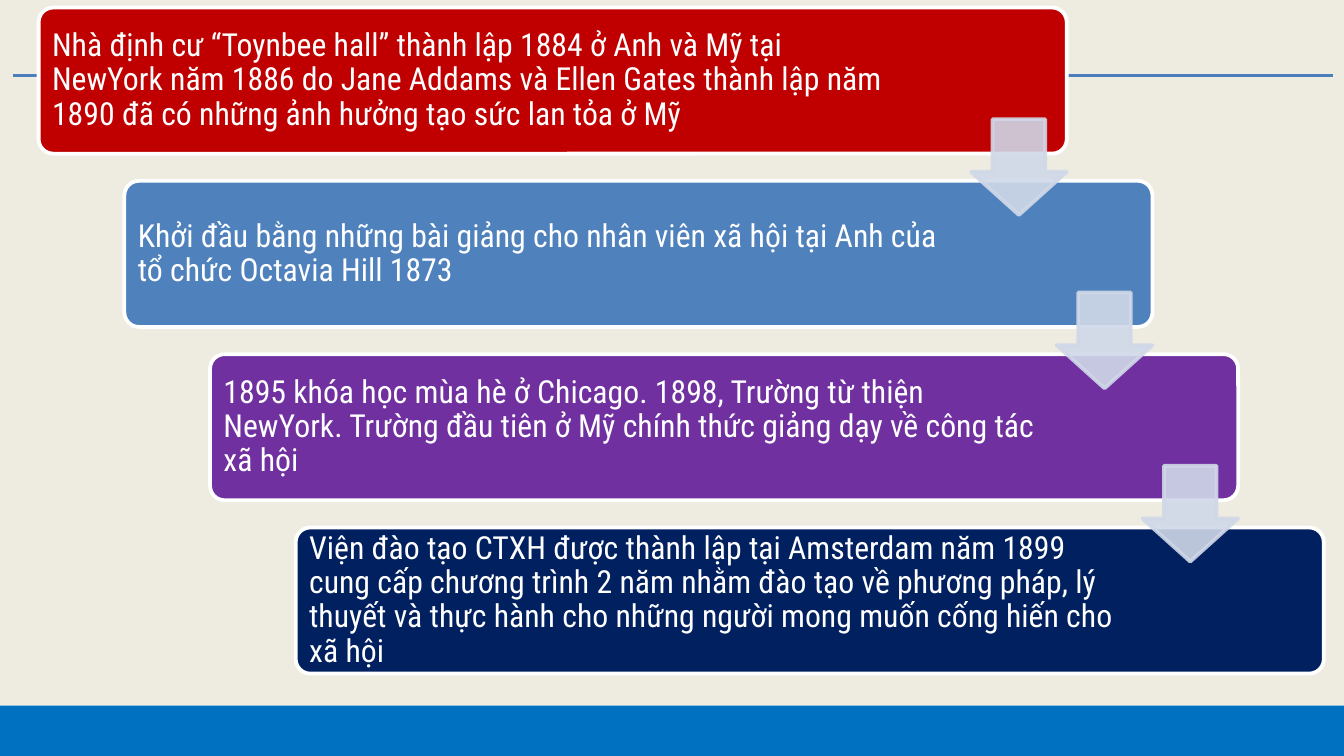
from lxml import etree
from pptx import Presentation
from pptx import util as u
from pptx.dml.color import RGBColor
from pptx.enum import shapes, text
from pptx.oxml.ns import qn

PX = 5715  # EMU in one px, 160 px to the inch
SLIDE = (1600, 900)
CARD = (1224, 174)
ARROW = 114
ARROW_DROP = 133
WHITE = "FFFFFF"
ARROW_COLOUR = "D0D8E8"

MILESTONES = [
    ("C00000", 1021, "Nhà định cư “Toynbee hall” thành lập 1884 ở Anh và Mỹ tại NewYork năm 1886 "
     "do Jane Addams và Ellen Gates thành lập năm 1890 đã có những ảnh hưởng tạo sức lan tỏa ở Mỹ"),
    ("4F81BD", 997, "Khởi đầu bằng những bài giảng cho nhân viên xã hội tại Anh của tổ chức "
     "Octavia Hill 1873"),
    ("7030A0", 998, "1895 khóa học mùa hè ở Chicago. 1898, Trường từ thiện NewYork. Trường đầu tiên "
     "ở Mỹ chính thức giảng dạy về công tác xã hội"),
    ("002060", 997, "Viện đào tạo CTXH được thành lập tại Amsterdam năm 1899 cung cấp chương trình "
     "2 năm nhằm đào tạo về phương pháp, lý thuyết và thực hành cho những người mong muốn cống hiến "
     "cho xã hội"),
]


def px(*lengths):
    return [u.Emu(round(length * PX)) for length in lengths]


def rgb(colour):
    return RGBColor.from_string(colour)


def apply(target, values):
    for name, value in values.items():
        setattr(target, name, value)


def add_block(slide, kind, box, fill, line=None, adjustments=()):
    block = slide.shapes.add_shape(kind, *px(*box))
    block.shadow.inherit = False
    block.fill.solid()
    block.fill.fore_color.rgb = rgb(fill)
    if line:
        block.line.color.rgb = rgb(line)
        block.line.width = u.Pt(2)
    else:
        block.line.fill.background()
    for index, value in enumerate(adjustments):
        block.adjustments[index] = value
    return block


def add_backdrop(slide, box):
    """Background colour, footer band and the rule behind the first card."""
    left, top, width, height = box
    slide.background.fill.solid()
    slide.background.fill.fore_color.rgb = rgb("EEECE1")
    add_block(slide, shapes.MSO_SHAPE.RECTANGLE,
              (left - 6, top + height - 60, width + 12, 60), "0070C0")
    rule = slide.shapes.add_connector(
        shapes.MSO_CONNECTOR.STRAIGHT,
        *px(left + 15, top + 90, left + width - 13, top + 90))
    rule.line.color.rgb = rgb("4B7EBC")
    rule.line.width = u.Pt(2)
    etree.SubElement(rule._element.spPr, qn("a:effectLst"))


def add_card(slide, box, fill, text_width, wording):
    left, top, width, height = box
    add_block(slide, shapes.MSO_SHAPE.ROUNDED_RECTANGLE, box, fill, WHITE, [0.1])
    label = slide.shapes.add_textbox(*px(left + 5, top + 5, text_width, height - 10))
    frame = label.text_frame
    inset, = px(11)
    apply(frame, {
        "word_wrap": True, "vertical_anchor": text.MSO_ANCHOR.MIDDLE,
        "margin_left": inset, "margin_right": inset,
        "margin_top": inset, "margin_bottom": inset,
    })
    paragraph = frame.paragraphs[0]
    paragraph.line_spacing = 0.9
    run = paragraph.add_run()
    run.text = wording
    apply(run.font, {"name": "Roboto Condensed", "size": u.Pt(17)})
    run.font.color.rgb = rgb(WHITE)


def add_step_arrow(slide, box):
    arrow = add_block(slide, shapes.MSO_SHAPE.DOWN_ARROW, box,
                      ARROW_COLOUR, ARROW_COLOUR, [0.55, 0.45])
    for colour in arrow._element.spPr.iter(qn("a:srgbClr")):
        etree.SubElement(colour, qn("a:alpha"), val="90000")


def add_staircase(slide, box):
    """Cards stepping down from the top left to the bottom right of the box."""
    left, top, width, height = box
    card_width, card_height = CARD
    steps = len(MILESTONES) - 1
    across = (width - card_width) / steps
    down = (height - card_height) / steps
    corners = [(left + i * across, top + i * down) for i in range(steps + 1)]
    for corner, milestone in zip(corners, MILESTONES):
        add_card(slide, (*corner, *CARD), *milestone)
    for x, y in corners[:-1]:
        add_step_arrow(slide, (x + card_width - ARROW, y + ARROW_DROP, ARROW, ARROW))


def main():
    deck = Presentation()
    deck.slide_width, deck.slide_height = px(*SLIDE)
    slide = deck.slides.add_slide(deck.slide_layouts[6])
    add_backdrop(slide, (0, 0, *SLIDE))
    add_staircase(slide, (46, 9, 1530, 793))
    deck.save("out.pptx")


if __name__ == "__main__":
    main()
